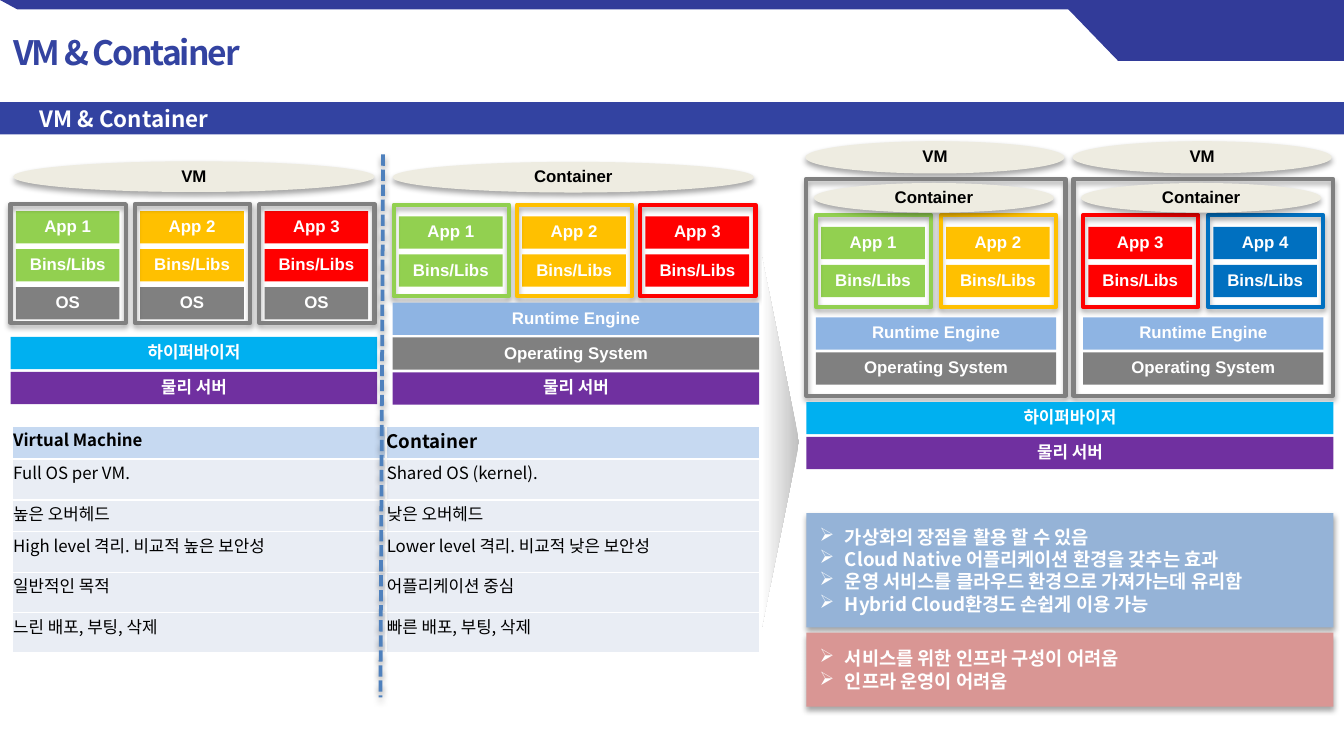
import pptx
import pptx.dml.color
import pptx.enum.dml
import pptx.enum.shapes
import pptx.enum.text
import pptx.oxml.ns
import pptx.util
from lxml import etree
from pptx.util import Cm

SHAPE = pptx.enum.shapes.MSO_SHAPE
ALIGN = pptx.enum.text.PP_ALIGN
MIDDLE = pptx.enum.text.MSO_ANCHOR.MIDDLE
qn = pptx.oxml.ns.qn

SANS, KOREAN = "Arial", "Noto Sans CJK KR"
WHITE, BLACK, GRAY = "FFFFFF", "000000", "808080"
GREEN, AMBER, RED, BLUE = "92D050", "FFC000", "FF0000", "0070C0"
BAR_H, BAR_STEP = 0.61, 0.66
APP_W, APP_STEP = 1.96, 0.72
FRAME_W = 2.18

ENGINE = ("Runtime Engine", "8EB4E3")
SYSTEM = ("Operating System", GRAY)
HYPERVISOR = ("하이퍼바이저", "00B0F0")
SERVER = ("물리 서버", "7030A0")
APPS = [("App 1", GREEN), ("App 2", AMBER), ("App 3", RED), ("App 4", BLUE)]


def rgb(color):
    return pptx.dml.color.RGBColor.from_string(color)


def add_xml(parent, tag, **attrs):
    return etree.SubElement(parent, qn(tag), **attrs)


def add_shadow(sp):
    effects = sp._element.spPr.find(qn("a:effectLst"))
    if effects is None:
        effects = add_xml(sp._element.spPr, "a:effectLst")
    shadow = add_xml(effects, "a:outerShdw", blurRad="39370", dist="22860",
                     dir="5400000", rotWithShape="0")
    add_xml(add_xml(shadow, "a:srgbClr", val=BLACK), "a:alpha", val="35000")


def set_font(p, size, color, name=SANS, bold=True):
    p.font.size, p.font.bold, p.font.name = pptx.util.Pt(size), bold, name
    p.font.color.rgb = rgb(color)
    props = p._p.pPr.find(qn("a:defRPr"))
    add_xml(props, "a:ea", typeface=KOREAN)
    return props


def add_box(s, kind, box, fill=None, line=None, shadow=False):
    sp = s.shapes.add_shape(kind, *map(Cm, box))
    sp.shadow.inherit = False
    if fill:
        sp.fill.solid()
        sp.fill.fore_color.rgb = rgb(fill)
    else:
        sp.fill.background()
    if line:
        sp.line.color.rgb = rgb(line)
        sp.line.width = pptx.util.Pt(2.25)
    else:
        sp.line.fill.background()
    if shadow:
        add_shadow(sp)
    return sp


def add_label(sp, text, color):
    tf = sp.text_frame
    tf.margin_left = tf.margin_right = tf.margin_top = tf.margin_bottom = 0
    tf.word_wrap, tf.vertical_anchor = False, MIDDLE
    p = tf.paragraphs[0]
    p.text, p.alignment, p.line_spacing = text, ALIGN.CENTER, 0.9
    set_font(p, 9, color)


def add_bars(s, x, y, w, bars, step=BAR_STEP):
    for i, (text, color) in enumerate(bars):
        box = (x, y + i * step, w, BAR_H)
        add_label(add_box(s, SHAPE.RECTANGLE, box, color), text, WHITE)


def add_oval(s, box, text):
    add_label(add_box(s, SHAPE.OVAL, box, "EEECE1", shadow=True), text, BLACK)


def add_apps(s, x, y, step, apps, with_os=False):
    """A row of framed stacks, one for each app."""
    for i, (name, color) in enumerate(apps):
        left = x + i * step
        bars = [(name, color), ("Bins/Libs", color)]
        if with_os:
            bars.append(("OS", GRAY))
        height, pad = (2.24, 0.13) if with_os else (1.73, 0.22)
        add_bars(s, left + 0.1, y + pad, APP_W, bars, APP_STEP)
        add_box(s, SHAPE.RECTANGLE, (left, y, FRAME_W, height),
                line=GRAY if with_os else color, shadow=True)


def add_header(s, w):
    # Corner decoration
    for points in ([(0, 0), (w, 0), (w, 0.18), (0.33, 0.18)],
                   [(20.02, 0), (w, 0), (w, 1.15), (21.13, 1.15)]):
        points = [(Cm(x), Cm(y)) for x, y in points]
        builder = s.shapes.build_freeform(*points[0])
        builder.add_line_segments(points[1:])
        sp = builder.convert_to_shape()
        sp.shadow.inherit = False
        sp.fill.solid()
        sp.fill.fore_color.rgb = rgb("323B99")
        sp.line.fill.background()

    # Title
    tf = s.shapes.add_textbox(Cm(0), Cm(0.48), Cm(5.16), Cm(1.02)).text_frame
    tf.word_wrap = False
    p = tf.paragraphs[0]
    p.text = "VM & Container"
    set_font(p, 18, "3343A1", KOREAN).set("spc", "-110")

    # Section band
    tf = add_box(s, SHAPE.RECTANGLE, (0, 1.93, w, 0.61), "3343A1").text_frame
    tf.margin_left, tf.vertical_anchor = Cm(0.75), MIDDLE
    p = tf.paragraphs[0]
    p.text, p.alignment = "VM & Container", ALIGN.LEFT
    set_font(p, 12, WHITE, KOREAN)


def add_vm_stack(s, x, y, w):
    add_oval(s, (x + 0.05, y, 6.83, 0.58), "VM")
    add_apps(s, x, y + 0.81, 2.35, APPS[:3], with_os=True)
    add_bars(s, x, y + 3.32, w, [HYPERVISOR, SERVER])


def add_container_stack(s, x, y, w):
    add_oval(s, (x, y, 6.83, 0.58), "Container")
    add_apps(s, x + 0.02, y + 0.81, 2.33, APPS[:3])
    add_bars(s, x, y + 2.66, w, [ENGINE, SYSTEM, SERVER])


def add_hybrid_vm(s, x, y, w, apps):
    """A virtual machine that holds a container stack."""
    add_oval(s, (x - 0.02, y, w, 0.61), "VM")
    add_apps(s, x + 0.18, y + 1.4, 2.36, apps)
    add_bars(s, x + 0.18, y + 3.33, w - 0.36, [ENGINE, SYSTEM])
    add_box(s, SHAPE.RECTANGLE, (x, y + 0.71, w, 4.1), line=GRAY, shadow=True)
    add_oval(s, (x + 0.14, y + 0.79, w - 0.36, 0.56), "Container")


def add_comparison(s, x, y, w):
    rows = [
        (0.62, "Virtual Machine", "Container"),
        (0.77, "Full OS per VM.", "Shared OS (kernel)."),
        (0.6, "높은 오버헤드", "낮은 오버헤드"),
        (0.77, "High level 격리. 비교적 높은 보안성",
         "Lower level 격리. 비교적 낮은 보안성"),
        (0.76, "일반적인 목적", "어플리케이션 중심"),
        (0.76, "느린 배포, 부팅, 삭제", "빠른 배포, 부팅, 삭제"),
    ]
    height = sum(row[0] for row in rows)
    table = s.shapes.add_table(len(rows), 2, Cm(x), Cm(y), Cm(w), Cm(height)).table
    for i, (row_h, *texts) in enumerate(rows):
        table.rows[i].height = Cm(row_h)
        for j, text in enumerate(texts):
            cell = table.cell(i, j)
            cell.margin_left = cell.margin_right = cell.margin_top = Cm(0.02)
            cell.margin_bottom = 0
            p = cell.text_frame.paragraphs[0]
            p.text = text
            set_font(p, 10 if (i, j) == (0, 1) else 9, BLACK, KOREAN, i == 0)
            props = cell._tc.get_or_add_tcPr()
            for side in ("a:lnL", "a:lnR", "a:lnT", "a:lnB"):
                fill = add_xml(add_xml(props, side, w="12700"), "a:solidFill")
                add_xml(fill, "a:srgbClr", val=WHITE)
            cell.fill.solid()
            cell.fill.fore_color.rgb = rgb("E9EDF4" if i else "C6D9F1")


def add_notes_panel(s, box, color, lines):
    tf = add_box(s, SHAPE.RECTANGLE, box, color, shadow=True).text_frame
    tf.word_wrap, tf.vertical_anchor = True, MIDDLE
    for i, text in enumerate(lines):
        p = tf.add_paragraph() if i else tf.paragraphs[0]
        p.text, p.alignment = text, ALIGN.LEFT
        props = p._p.get_or_add_pPr()
        props.set("marL", str(Cm(0.48)))
        props.set("indent", str(-Cm(0.48)))
        add_xml(props, "a:buChar", char="➢")
        set_font(p, 10, WHITE, KOREAN)


def add_dividers(s):
    # Wedge pointing from the two stacks to the combined one
    sp = add_box(s, SHAPE.ISOSCELES_TRIANGLE, (11.23, 8, 7.04, 0.71))
    sp.rotation = 90
    sp.fill.gradient()
    sp.fill.gradient_angle = 270
    for stop, color in zip(sp.fill.gradient_stops, ("BFBFBF", WHITE)):
        stop.color.rgb = rgb(color)

    # Dashed line between VM and container
    line = s.shapes.add_connector(pptx.enum.shapes.MSO_CONNECTOR.STRAIGHT,
                                  Cm(7.24), Cm(2.92), Cm(7.19), Cm(13.18))
    line.line.color.rgb = rgb("4F81BD")
    line.line.width = pptx.util.Pt(2)
    line.line.dash_style = pptx.enum.dml.MSO_LINE.SQUARE_DOT
    add_shadow(line)


def main():
    prs = pptx.Presentation()
    prs.slide_width, prs.slide_height = Cm(25.4), Cm(14.29)
    s = prs.slides.add_slide(prs.slide_layouts[6])
    add_header(s, 25.4)
    add_comparison(s, 0.23, 8.06, 14.12)
    add_vm_stack(s, 0.2, 3.05, 6.93)
    add_container_stack(s, 7.42, 3.06, 6.93)
    add_hybrid_vm(s, 15.24, 2.67, 4.9, APPS[:2])
    add_hybrid_vm(s, 20.29, 2.67, 4.9, APPS[2:])
    add_bars(s, 15.24, 7.6, 9.96, [HYPERVISOR, SERVER])
    add_notes_panel(s, (15.24, 9.7, 9.96, 2.16), "95B3D7", [
        "가상화의 장점을 활용 할 수 있음",
        "Cloud Native 어플리케이션 환경을 갖추는 효과",
        "운영 서비스를 클라우드 환경으로 가져가는데 유리함",
        "Hybrid Cloud환경도 손쉽게 이용 가능"])
    add_notes_panel(s, (15.24, 11.96, 9.96, 1.4), "D99694", [
        "서비스를 위한 인프라 구성이 어려움", "인프라 운영이 어려움"])
    add_dividers(s)
    prs.save("out.pptx")


if __name__ == "__main__":
    main()
